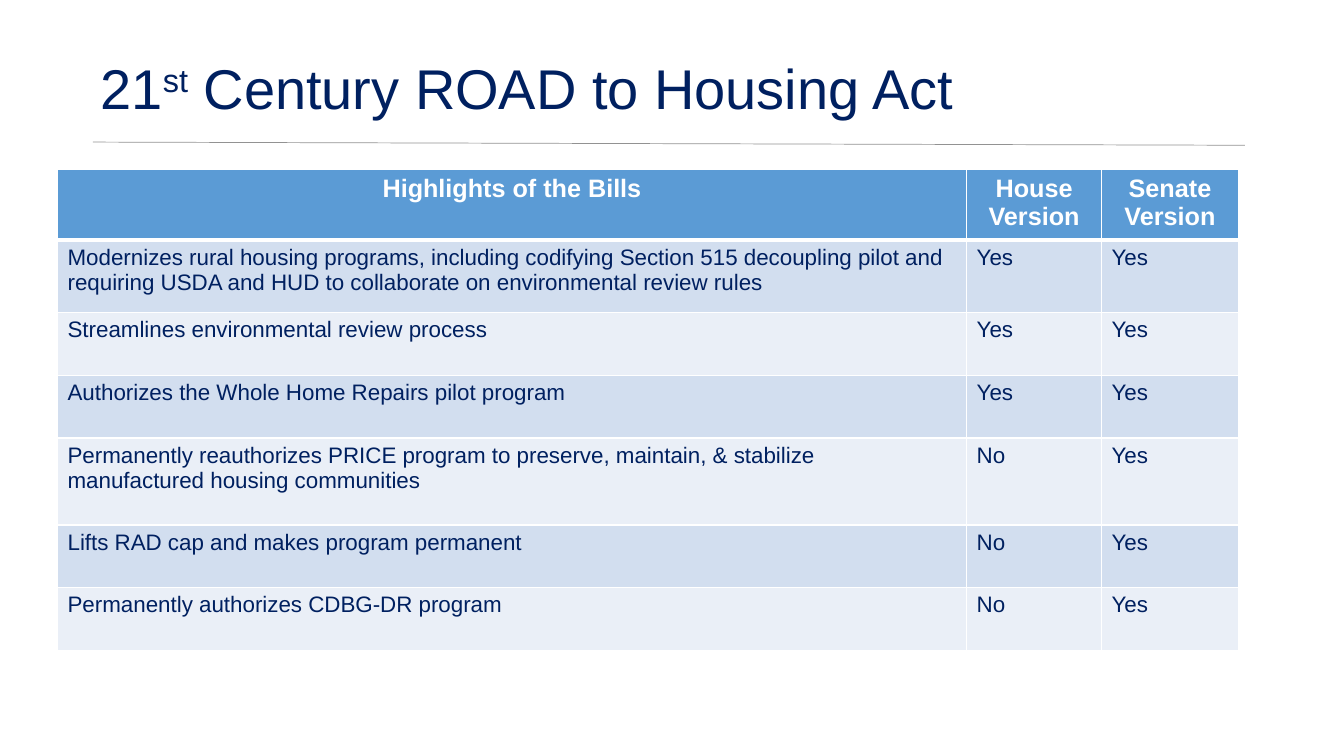
from dataclasses import dataclass

from lxml import etree
from pptx import Presentation
from pptx.dml.color import RGBColor
from pptx.enum.shapes import MSO_CONNECTOR
from pptx.enum.text import MSO_ANCHOR, PP_ALIGN
from pptx.oxml.ns import qn
from pptx.util import Cm, Pt

STRAIGHT = MSO_CONNECTOR.STRAIGHT
MIDDLE = MSO_ANCHOR.MIDDLE
LEFT, CENTER = PP_ALIGN.LEFT, PP_ALIGN.CENTER


@dataclass(frozen=True)
class Theme:
    font: str = "Arial"
    navy: str = "002060"
    white: str = "FFFFFF"
    rule: str = "929292"
    header: str = "5B9BD5"
    bands: tuple = ("D2DEEF", "EAEFF7")
    title_size: int = 40
    header_size: int = 18
    body_size: int = 16
    rule_width: float = 0.5
    border: int = 1
    header_border: int = 3


class SlideBuilder:
    def __init__(self, slide, theme):
        self.slide = slide
        self.theme = theme

    def style(self, run, size, color, bold=False):
        font = run.font
        font.name = self.theme.font
        font.size = Pt(size)
        font.bold = bold
        font.color.rgb = RGBColor.from_string(color)

    def title(self, parts, left, top, width, height):
        sp = self.slide.shapes.add_textbox(Cm(left), Cm(top), Cm(width), Cm(height))
        tf = sp.text_frame
        tf.word_wrap = True
        tf.vertical_anchor = MIDDLE
        p = tf.paragraphs[0]
        p.line_spacing = 0.9
        for text, baseline in parts:
            r = p.add_run()
            r.text = text
            self.style(r, self.theme.title_size, self.theme.navy)
            if baseline:
                r.font._element.set("baseline", str(baseline * 1000))

    def rule(self, x1, y1, x2, y2):
        line = self.slide.shapes.add_connector(STRAIGHT, Cm(x1), Cm(y1), Cm(x2), Cm(y2))
        line.line.color.rgb = RGBColor.from_string(self.theme.rule)
        line.line.width = Pt(self.theme.rule_width)
        etree.SubElement(line._element.spPr, qn("a:effectLst"))

    def borders(self, cell, top, bottom):
        tc_pr = cell._tc.get_or_add_tcPr()
        widths = {"L": self.theme.border, "R": self.theme.border, "T": top, "B": bottom}
        for side, width in widths.items():
            ln = etree.SubElement(tc_pr, qn(f"a:ln{side}"), w=str(Pt(width)))
            fill = etree.SubElement(ln, qn("a:solidFill"))
            etree.SubElement(fill, qn("a:srgbClr"), val=self.theme.white)

    def cell(self, cell, text, row):
        t = self.theme
        header = row == 0
        self.borders(
            cell,
            t.header_border if row == 1 else t.border,
            t.header_border if header else t.border,
        )
        cell.fill.solid()
        color = t.header if header else t.bands[(row - 1) % 2]
        cell.fill.fore_color.rgb = RGBColor.from_string(color)
        p = cell.text_frame.paragraphs[0]
        p.text = text
        p.alignment = CENTER if header else LEFT
        size, ink = (t.header_size, t.white) if header else (t.body_size, t.navy)
        self.style(p.runs[0], size, ink, header)

    def table(self, rows, left, top, widths, heights):
        frame = self.slide.shapes.add_table(
            len(rows), len(widths), Cm(left), Cm(top), Cm(sum(widths)), Cm(sum(heights))
        )
        table = frame.table
        for column, width in zip(table.columns, widths):
            column.width = Cm(width)
        for i, (row, height) in enumerate(zip(rows, heights)):
            table.rows[i].height = Cm(height)
            for j, text in enumerate(row):
                self.cell(table.cell(i, j), text, i)


TITLE = [("21", 0), ("st", 30), (" Century ROAD to Housing Act", 0)]
BILLS = [
    ("Highlights of the Bills", "House Version", "Senate Version"),
    (
        "Modernizes rural housing programs, including codifying Section 515 decoupling "
        "pilot and requiring USDA and HUD to collaborate on environmental review rules",
        "Yes",
        "Yes",
    ),
    ("Streamlines environmental review process", "Yes", "Yes"),
    ("Authorizes the Whole Home Repairs pilot program", "Yes", "Yes"),
    (
        "Permanently reauthorizes PRICE program to preserve, maintain, & stabilize "
        "manufactured housing communities",
        "No",
        "Yes",
    ),
    ("Lifts RAD cap and makes program permanent", "No", "Yes"),
    ("Permanently authorizes CDBG-DR program", "No", "Yes"),
]
COLUMN_WIDTHS = [22.91, 3.4, 3.45]
ROW_HEIGHTS = [1.68, 1.83, 1.58, 1.58, 2.19, 1.58, 1.58]


def main():
    prs = Presentation()
    prs.slide_width, prs.slide_height = Cm(33.87), Cm(19.05)
    s = SlideBuilder(prs.slides.add_slide(prs.slide_layouts[6]), Theme())
    s.rule(2.34, 3.58, 31.37, 3.66)
    s.title(TITLE, 2.29, 1.3, 28.35, 2)
    s.table(BILLS, 1.45, 4.27, COLUMN_WIDTHS, ROW_HEIGHTS)
    prs.save("out.pptx")


if __name__ == "__main__":
    main()
